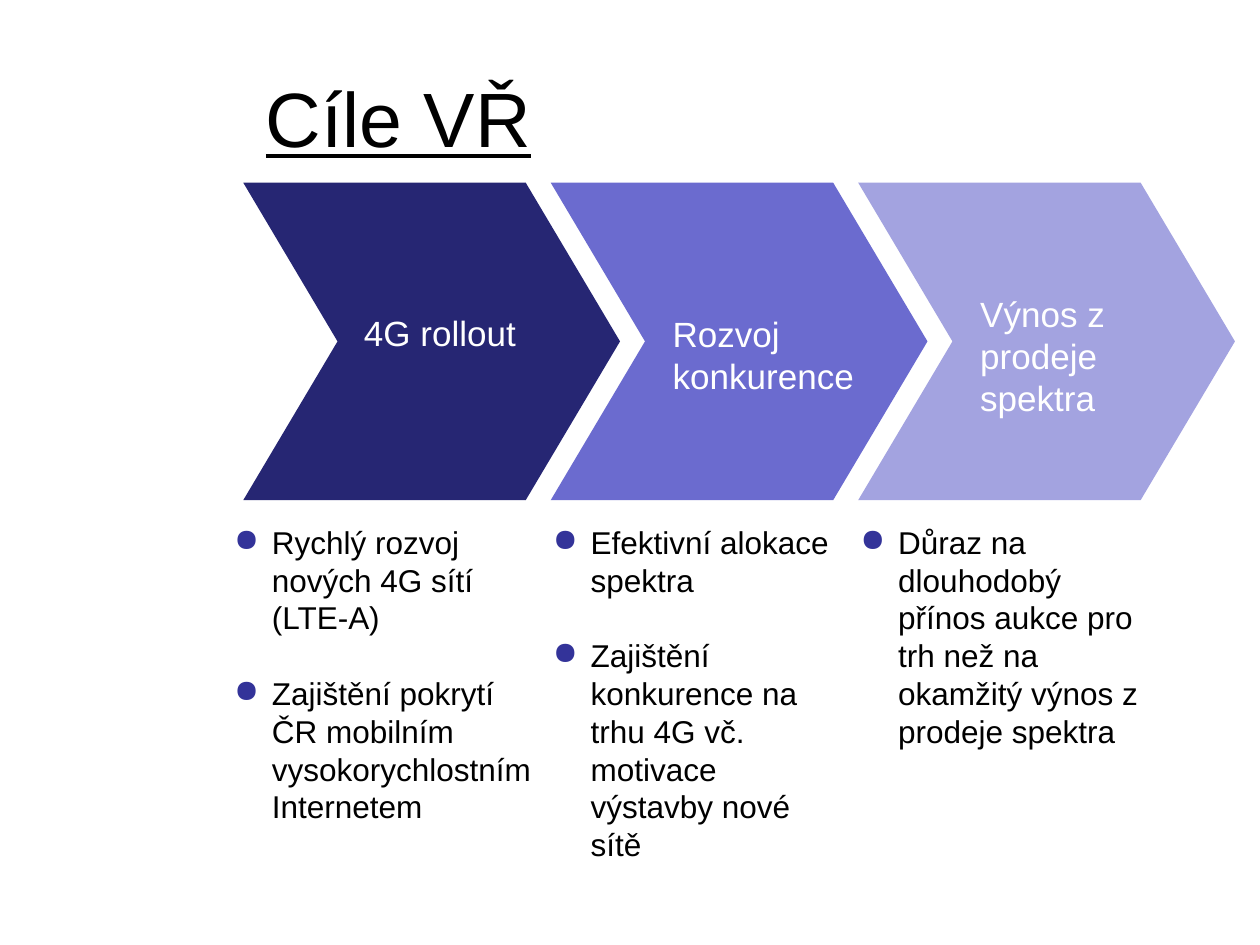
from pptx import Presentation
from pptx.dml.color import RGBColor
from pptx.enum.shapes import MSO_SHAPE
from pptx.enum.text import MSO_ANCHOR, PP_ALIGN
from pptx.oxml.ns import qn
from pptx.util import Pt

CHEVRON = MSO_SHAPE.CHEVRON
MIDDLE, TOP = MSO_ANCHOR.MIDDLE, MSO_ANCHOR.TOP
LEFT = PP_ALIGN.LEFT

BLACK = RGBColor(0x00, 0x00, 0x00)
WHITE = RGBColor(0xFF, 0xFF, 0xFF)
BULLET = RGBColor(0x33, 0x33, 0x99)
NAVY = RGBColor(0x26, 0x26, 0x73)
VIOLET = RGBColor(0x6B, 0x6B, 0xCF)
LAVENDER = RGBColor(0xA3, 0xA3, 0xE0)


class SlideBuilder:
    font_name = "Arial"
    title_size, label_size, list_size = 44, 20, 18
    bullet_indent = 21.6
    line_height = 1.2

    def __init__(self, slide):
        self.slide = slide

    def add_run(self, paragraph, text, size, color, underline=None):
        paragraph.alignment = LEFT
        run = paragraph.add_run()
        run.text = text
        run.font.name = self.font_name
        run.font.size = Pt(size)
        run.font.color.rgb = color
        run.font.underline = underline

    def title(self, text, left, top, width, height):
        shape = self.slide.shapes.title
        shape.left, shape.top = Pt(left), Pt(top)
        shape.width, shape.height = Pt(width), Pt(height)
        frame = shape.text_frame
        frame.vertical_anchor = MIDDLE
        self.add_run(frame.paragraphs[0], text, self.title_size, BLACK, True)

    def chevron(self, left, top, width, height, color):
        shape = self.slide.shapes.add_shape(
            CHEVRON, Pt(left), Pt(top), Pt(width), Pt(height))
        shape.adjustments[0] = 0.297
        shape.shadow.inherit = False
        shape.fill.solid()
        shape.fill.fore_color.rgb = color
        shape.line.fill.background()

    def text_frame(self, left, top, width, height):
        box = self.slide.shapes.add_textbox(
            Pt(left), Pt(top), Pt(width), Pt(height))
        frame = box.text_frame
        frame.word_wrap = True
        frame.vertical_anchor = TOP
        return frame

    def label(self, text, left, top, width, height):
        frame = self.text_frame(left, top, width, height)
        self.add_run(frame.paragraphs[0], text, self.label_size, WHITE)

    def bullet_list(self, items, left, top, width, height):
        frame = self.text_frame(left, top, width, height)
        for index, item in enumerate(items):
            paragraph = frame.paragraphs[0] if index == 0 else frame.add_paragraph()
            self.add_bullet(paragraph)
            if index:
                paragraph.space_before = Pt(self.list_size * self.line_height)
            self.add_run(paragraph, item, self.list_size, BLACK)

    def add_bullet(self, paragraph):
        properties = paragraph._p.get_or_add_pPr()
        indent = Pt(self.bullet_indent)
        properties.set("marL", str(indent))
        properties.set("indent", str(-indent))
        color = properties.makeelement(qn("a:buClr"), {})
        color.append(color.makeelement(qn("a:srgbClr"), {"val": str(BULLET)}))
        properties.append(color)
        properties.append(properties.makeelement(qn("a:buChar"), {"char": "●"}))


def main():
    presentation = Presentation()
    presentation.slide_width, presentation.slide_height = Pt(720), Pt(540)
    title_only = presentation.slide_layouts[5]
    builder = SlideBuilder(presentation.slides.add_slide(title_only))

    builder.title("Cíle VŘ", 144.7, 21.6, 555.8, 90)

    # Three goals, left to right
    first_left, pitch = 139, 175.7
    for index, color in enumerate((NAVY, VIOLET, LAVENDER)):
        builder.chevron(first_left + index * pitch, 104.4, 215.3, 181.4, color)

    # Goal names: text, left, top, width, height
    labels = (
        ("4G rollout", 200.9, 174.2, 130.3, 31.7),
        ("Rozvoj konkurence", 377.3, 175, 136.1, 55.4),
        ("Výnos z prodeje spektra", 553, 163.4, 130.3, 79.9),
    )
    for label in labels:
        builder.label(*label)

    # Details under each goal: items, left, width
    details = (
        (("Rychlý rozvoj nových 4G sítí (LTE-A)",
          "Zajištění pokrytí ČR mobilním vysokorychlostním Internetem"),
         126.7, 187.9),
        (("Efektivní alokace spektra",
          "Zajištění konkurence na trhu 4G vč. motivace výstavby nové sítě"),
         308.9, 182.2),
        (("Důraz na dlouhodobý přínos aukce pro trh než na okamžitý výnos "
          "z prodeje spektra",),
         484.6, 182.2),
    )
    for items, left, width in details:
        builder.bullet_list(items, left, 295.2, width, 181.4)

    presentation.save("out.pptx")


if __name__ == "__main__":
    main()
